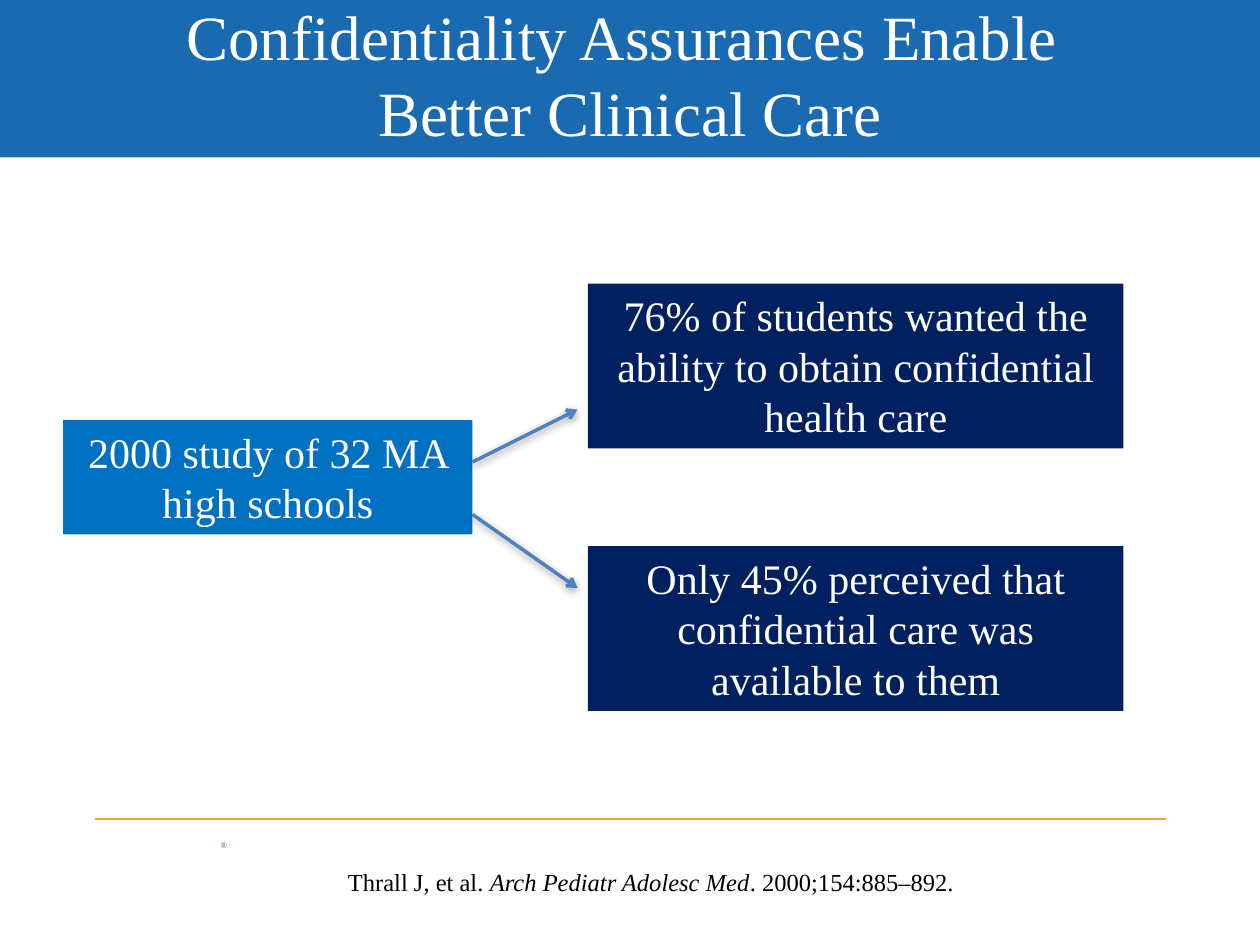
from typing import NamedTuple

from lxml.etree import SubElement
from pptx import Presentation
from pptx.dml.color import RGBColor
from pptx.enum.shapes import MSO_CONNECTOR as Link, MSO_SHAPE as Kind
from pptx.enum.text import MSO_ANCHOR as Anchor, PP_ALIGN as Align
from pptx.oxml.ns import qn
from pptx.util import Pt

PX = 7620  # 120 px to the inch
FONT = "Times New Roman"
WHITE, BLACK = "FFFFFF", "000000"
BAND, SKY, NAVY = "196AB0", "0070C0", "002060"
GOLD, STEEL = "EEA33C", "4F81BD"


class Area(NamedTuple):
    left: int
    top: int
    width: int
    height: int


class Card(NamedTuple):
    area: Area
    fill: str
    text: str


class Arrow(NamedTuple):
    start: tuple[int, int]
    end: tuple[int, int]


CARDS = [
    Card(Area(60, 400, 390, 109), SKY, "2000 study of 32 MA high schools"),
    Card(Area(560, 270, 510, 157), NAVY,
         "76% of students wanted the ability to obtain confidential health care"),
    Card(Area(560, 520, 510, 157), NAVY,
         "Only 45% perceived that confidential care was available to them"),
]
ARROWS = [Arrow((450, 440), (550, 390)), Arrow((450, 490), (550, 560))]


def emu(*sizes: int) -> list[int]:
    return [size * PX for size in sizes]


def color(code: str) -> RGBColor:
    return RGBColor.from_string(code)


def write(shape, *parts: str, size: int, ink: str = WHITE, align=Align.CENTER,
          anchor=Anchor.TOP, wrap: bool = True, slant: int = -1) -> None:
    """Fill one paragraph; a line feed is a line break, slant is the italic part."""
    frame = shape.text_frame
    frame.word_wrap = wrap
    frame.vertical_anchor = anchor
    para = frame.paragraphs[0]
    para.alignment = align
    for pos, part in enumerate(parts):
        for row, line in enumerate(part.split("\n")):
            if row:
                para.add_line_break()
            run = para.add_run()
            run.text = line
            font = run.font
            font.name, font.size = FONT, Pt(size)
            font.color.rgb = color(ink)
            font.italic = pos == slant


def add_box(slide, area: Area, fill: str):
    box = slide.shapes.add_shape(Kind.RECTANGLE, *emu(*area))
    box.shadow.inherit = False
    box.fill.solid()
    box.fill.fore_color.rgb = color(fill)
    box.line.fill.background()
    return box


def add_text(slide, area: Area, *parts: str, **style):
    box = slide.shapes.add_textbox(*emu(*area))
    write(box, *parts, **style)
    return box


def add_line(slide, start: tuple[int, int], end: tuple[int, int],
             ink: str, weight: float):
    """Draw a line; return it with its empty effect list."""
    line = slide.shapes.add_connector(Link.STRAIGHT, *emu(*start, *end))
    line.line.color.rgb = color(ink)
    line.line.width = Pt(weight)
    props = line._element.spPr
    return line, SubElement(props, qn("a:effectLst"))


def add_arrow(slide, arrow: Arrow) -> None:
    line, effects = add_line(slide, arrow.start, arrow.end, STEEL, 2)
    SubElement(line.line._get_or_add_ln(), qn("a:tailEnd"), type="arrow")
    shade = SubElement(effects, qn("a:outerShdw"), blurRad=str(Pt(5)),
                       dist=str(Pt(1.6)), dir="5400000", rotWithShape="0")
    tint = SubElement(shade, qn("a:srgbClr"), val=BLACK)
    SubElement(tint, qn("a:alpha"), val="38000")


def main() -> None:
    deck = Presentation()
    deck.slide_width, deck.slide_height = emu(1200, 900)
    slide = deck.slides.add_slide(deck.slide_layouts[6])

    add_box(slide, Area(0, 0, 1200, 150), BAND)
    mark = add_text(slide, Area(210, 800, 30, 10), "®", size=5, ink=BAND,
                    align=Align.LEFT)
    frame = mark.text_frame
    frame.margin_left = frame.margin_right = 0
    frame.margin_top = frame.margin_bottom = 0
    add_line(slide, (90, 780), (1110, 780), GOLD, 0.75)
    add_text(slide, Area(60, 10, 1080, 120),
             "Confidentiality Assurances Enable \nBetter Clinical Care",
             size=36, anchor=Anchor.MIDDLE)

    for card in CARDS:
        write(add_box(slide, card.area, card.fill), card.text, size=24)
    for arrow in ARROWS:
        add_arrow(slide, arrow)

    add_text(slide, Area(319, 820, 602, 41), "Thrall\u00a0J, et al. ",
             "Arch Pediatr Adolesc Med", ". 2000;154:885–892. ",
             size=14, ink=BLACK, wrap=False, slant=1)
    deck.save("out.pptx")


if __name__ == "__main__":
    main()
